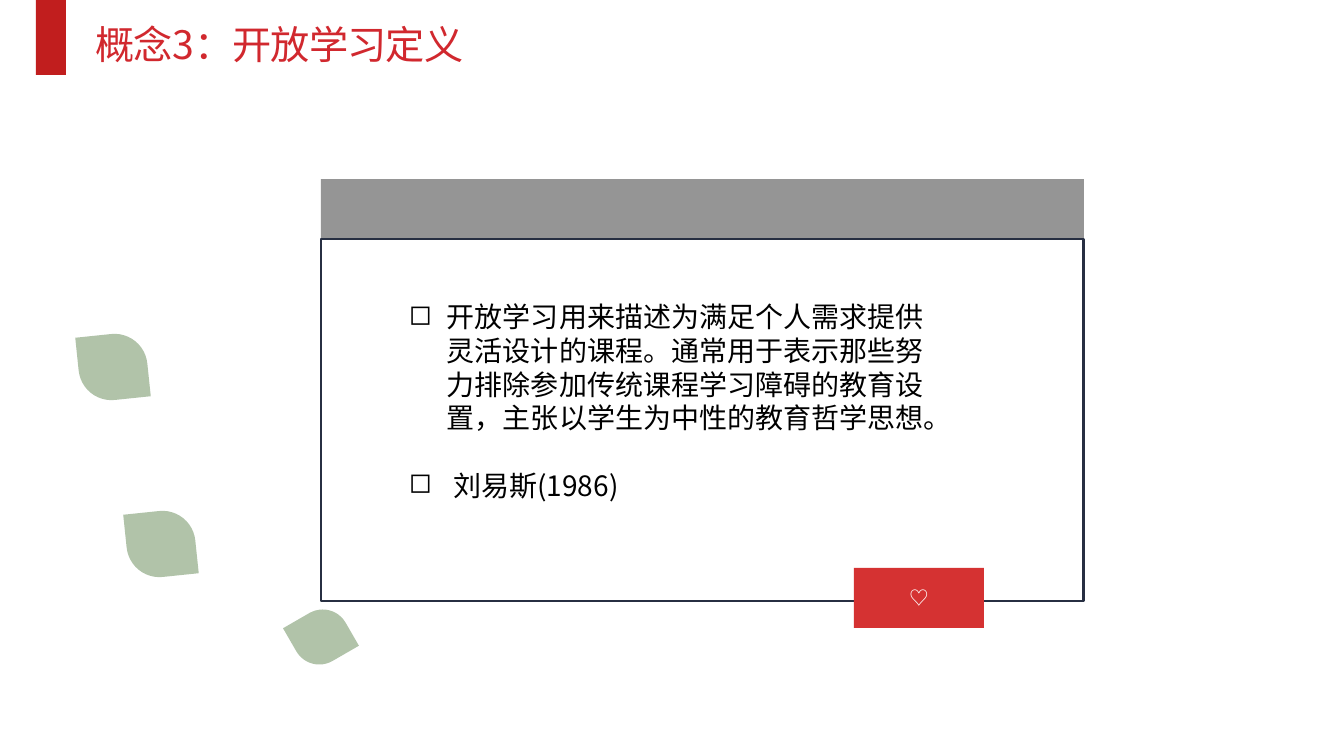
from pptx import Presentation
from pptx.dml.color import RGBColor
from pptx.enum.shapes import MSO_SHAPE
from pptx.enum.text import MSO_ANCHOR, PP_ALIGN
from pptx.oxml.ns import qn
from pptx.util import Pt
from lxml.etree import SubElement

TITLE = "概念3：开放学习定义"
POINTS = [
    "开放学习用来描述为满足个人需求提供灵活设计的课程。通常用于表示那些努力排除参加传统课程学习障碍的教育设置，主张以学生为中性的教育哲学思想。",
    " 刘易斯(1986)",
]
# centre x, centre y, width, height, rotation
LEAVES = [(161, 544, 69, 66, -6), (321, 637, 57, 53, -30), (113, 367, 69, 66, -6)]

FONT = "Noto Sans CJK SC"
TAB_RED = RGBColor(0xC1, 0x1E, 0x1E)
TITLE_RED = RGBColor(0xD1, 0x28, 0x2E)
BADGE_RED = RGBColor(0xD5, 0x32, 0x32)
LEAF_GREEN = RGBColor(0x6F, 0x91, 0x61)
GREY = RGBColor(0x95, 0x95, 0x95)
NAVY = RGBColor(0x27, 0x2F, 0x42)
BLACK = RGBColor(0, 0, 0)
WHITE = RGBColor(0xFF, 0xFF, 0xFF)

PX = 914400 / 100.8
INDENT = 38
LINE = 1.2  # line pitch as a multiple of the text size


def px(*lengths):
    return [round(n * PX) for n in lengths]


def add_block(slide, box, fill=None, line=None, kind=MSO_SHAPE.RECTANGLE):
    sp = slide.shapes.add_shape(kind, *px(*box))
    sp.shadow.inherit = False
    if fill is None:
        sp.fill.background()
    else:
        sp.fill.solid()
        sp.fill.fore_color.rgb = fill
    if line is None:
        sp.line.fill.background()
    else:
        sp.line.color.rgb = line
        sp.line.width = Pt(2)
    return sp


def add_leaf(slide, cx, cy, w, h, rotation):
    leaf = add_block(slide, (cx - w / 2, cy - h / 2, w, h), LEAF_GREEN,
                     kind=MSO_SHAPE.ROUND_2_DIAG_RECTANGLE)
    leaf.adjustments[0], leaf.adjustments[1] = 0, 0.5
    leaf.rotation = rotation
    color = leaf.fill._xPr.find(qn("a:solidFill"))[0]
    SubElement(color, qn("a:alpha")).set("val", "54000")


def add_text(p, text, size, color):
    p.line_spacing = Pt(round(size * LINE, 1))
    r = p.add_run()
    r.text = text
    r.font.size = Pt(size)
    r.font.name = FONT
    r.font.color.rgb = color
    SubElement(r.font._element, qn("a:ea")).set("typeface", FONT)
    return r


def add_bullet(p):
    pPr = p._p.get_or_add_pPr()
    indent = px(INDENT)[0]
    pPr.set("marL", str(indent))
    pPr.set("indent", str(-indent))
    SubElement(pPr, qn("a:buChar")).set("char", "◻")


def fill_title(title):
    title.left, title.top, title.width, title.height = px(85, 15, 391, 57)
    tf = title.text_frame
    tf.word_wrap = True
    tf.vertical_anchor = MSO_ANCHOR.TOP
    p = tf.paragraphs[0]
    p.alignment = PP_ALIGN.LEFT
    r = add_text(p, TITLE, 28, TITLE_RED)
    r.font._element.set("spc", "-60")


def add_points(slide):
    tf = slide.shapes.add_textbox(*px(399, 295, 546, 214)).text_frame
    tf.word_wrap = True
    for i, point in enumerate(POINTS):
        p = tf.add_paragraph() if i else tf.paragraphs[0]
        add_bullet(p)
        if i:
            p.space_before = Pt(24)
        add_text(p, point, 20, BLACK)


def main():
    prs = Presentation()
    prs.slide_width, prs.slide_height = px(1344, 756)
    slide = prs.slides.add_slide(prs.slide_layouts[5])
    add_block(slide, (36, 0, 30, 75), TAB_RED)
    fill_title(slide.shapes.title)
    add_points(slide)
    for leaf in LEAVES:
        add_leaf(slide, *leaf)
    add_block(slide, (321, 179, 763, 59), GREY)
    add_block(slide, (321, 239, 763, 362), line=NAVY)
    badge = add_block(slide, (854, 568, 130, 60), BADGE_RED)
    badge.text_frame.vertical_anchor = MSO_ANCHOR.MIDDLE
    p = badge.text_frame.paragraphs[0]
    p.alignment = PP_ALIGN.CENTER
    add_text(p, "♡", 14, WHITE)
    prs.save("out.pptx")


if __name__ == "__main__":
    main()
